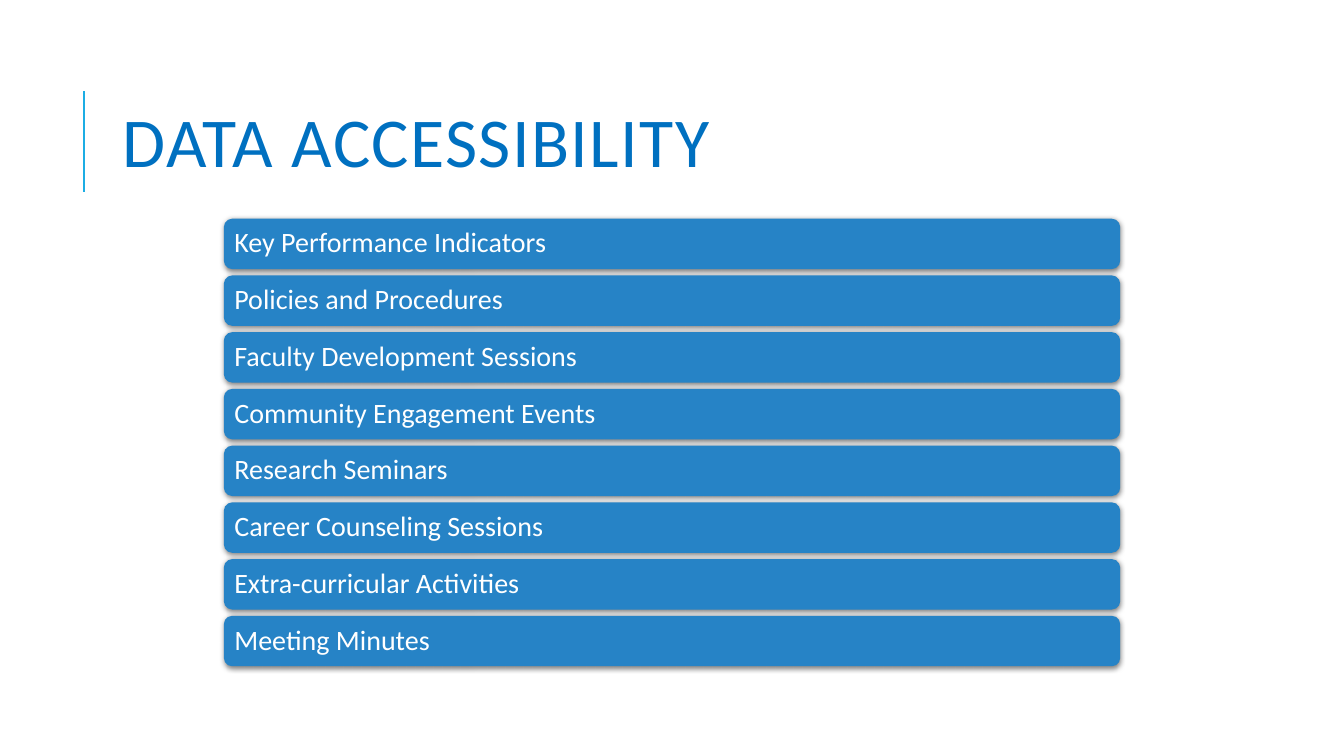
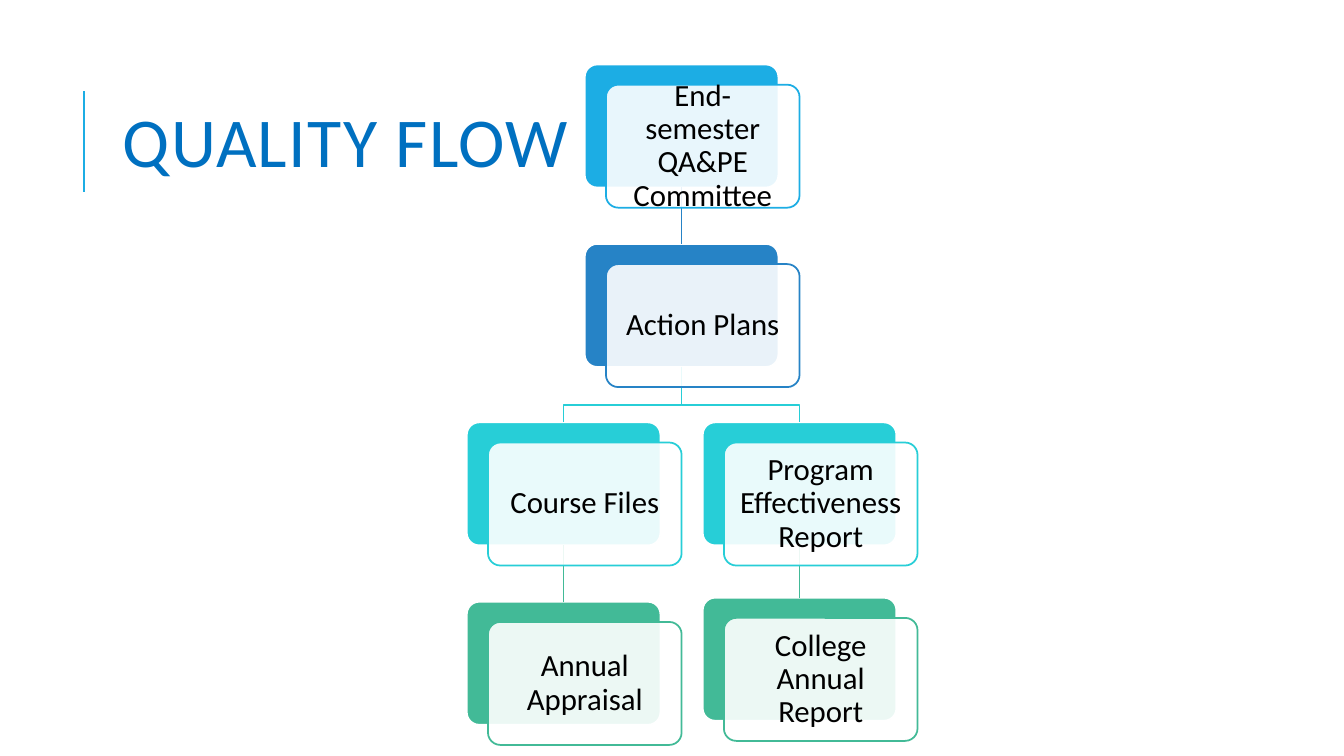
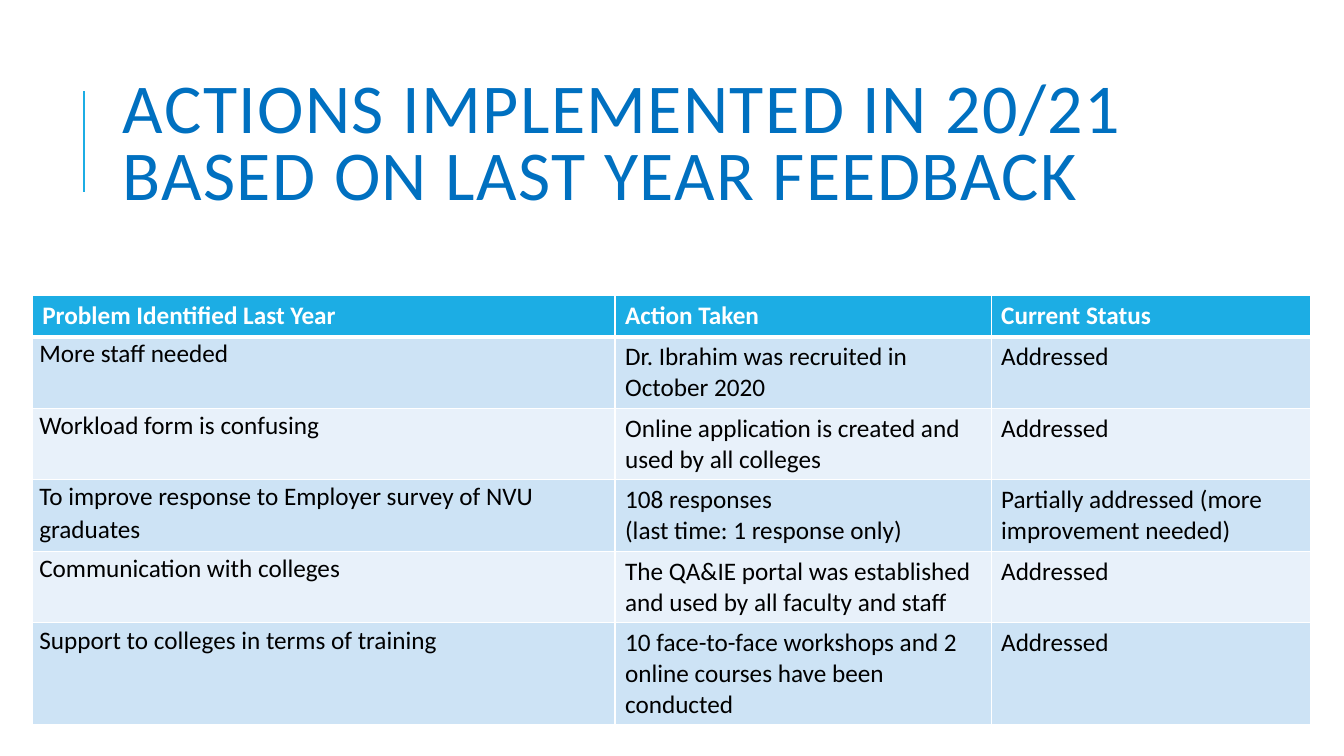
from pptx import Presentation
from pptx.dml.color import RGBColor
from pptx.enum.shapes import MSO_CONNECTOR as Line, MSO_SHAPE as Shape
from pptx.enum.text import MSO_ANCHOR as Anchor, PP_ALIGN as Align
from pptx.oxml.ns import qn
from pptx.util import Inches, Pt
from lxml.etree import SubElement

FONT = "Calibri"
COLORS = {
    "title": "0070C0", "sky": "1CADE4", "blue": "2683C6", "cyan": "27CED7",
    "green": "42BA97", "white": "FFFFFF", "black": "000000",
    "band_dark": "CDE3F5", "band_light": "E8F1FA",
}

# Content
DATA_SOURCES = [
    "Key Performance Indicators", "Policies and Procedures",
    "Faculty Development Sessions", "Community Engagement Events",
    "Research Seminars", "Career Counseling Sessions",
    "Extra-curricular Activities", "Meeting Minutes",
]
# key: (text, colour, column offset in steps, top, parent key)
FLOW = {
    "committee": ("End-semester QA&PE Committee", "sky", 0, 0.64, None),
    "plans": ("Action Plans", "blue", 0, 2.42, "committee"),
    "courses": ("Course Files", "cyan", -1, 4.19, "plans"),
    "appraisal": ("Annual Appraisal", "green", -1, 5.97, "courses"),
    "program": ("Program Effectiveness Report", "cyan", 1, 4.19, "plans"),
    "college": ("College Annual Report", "green", 1, 5.93, "program"),
}
ACTIONS = [
    ("Problem Identified Last Year", "Action Taken", "Current Status"),
    ("More staff needed", "Dr. Ibrahim was recruited in October 2020", "Addressed"),
    ("Workload form is confusing",
     "Online application is created and used by all colleges", "Addressed"),
    ("To improve response to Employer survey of NVU graduates",
     "108 responses\n(last time: 1 response only)",
     "Partially addressed (more improvement needed)"),
    ("Communication with colleges",
     "The QA&IE portal was established and used by all faculty and staff",
     "Addressed"),
    ("Support to colleges in terms of training",
     "10 face-to-face workshops and 2 online courses have been conducted",
     "Addressed"),
]
COLUMN_WIDTHS = [5.78, 3.73, 3.17]
ROW_HEIGHTS = [0.41, 0.71, 0.71, 0.71, 0.71, 1.01]


# Shared helpers
def rgb(name):
    return RGBColor.from_string(COLORS[name])


def write(frame, text, size, color, spacing=1.0, align=Align.LEFT, bold=False):
    frame.text = text
    frame.word_wrap = True
    for paragraph in frame.paragraphs:
        paragraph.line_spacing = spacing
        paragraph.alignment = align
        for run in paragraph.runs:
            font = run.font
            font.name, font.size, font.bold = FONT, Pt(size), bold
            font.color.rgb = rgb(color)


def set_margins(frame, margin):
    frame.margin_left = frame.margin_right = Inches(margin)
    frame.margin_top = frame.margin_bottom = Inches(margin)


def set_line(shape, color, width):
    shape.line.color.rgb = rgb(color)
    shape.line.width = Pt(width)


def add_line(slide, color, width, x1=0, y1=0, x2=0, y2=0):
    line = slide.shapes.add_connector(
        Line.STRAIGHT, Inches(x1), Inches(y1), Inches(x2), Inches(y2))
    set_line(line, color, width)
    SubElement(line._element.spPr, qn("a:effectLst"))
    return line


def add_round_box(slide, x, y, width, height, fill):
    box = slide.shapes.add_shape(
        Shape.ROUNDED_RECTANGLE, Inches(x), Inches(y), Inches(width), Inches(height))
    box.shadow.inherit = False
    box.fill.solid()
    box.fill.fore_color.rgb = rgb(fill)
    box.text_frame.vertical_anchor = Anchor.MIDDLE
    return box


def add_titled_slide(prs, title):
    slide = prs.slides.add_slide(prs.slide_layouts[6])
    add_line(slide, "sky", 1.5, 0.83, 1.9, 0.83, 0.9)
    heading = slide.shapes.add_textbox(
        Inches(1.12), Inches(0.64), Inches(10.63), Inches(1.64)).text_frame
    heading.vertical_anchor = Anchor.MIDDLE
    write(heading, title, 50, "title", spacing=0.8)
    heading.paragraphs[0].runs[0].font._element.set("spc", "100")
    return slide


# Slide 1: stacked bars
def add_soft_shadow(shape):
    effects = shape._element.spPr.find(qn("a:effectLst"))
    shadow = SubElement(effects, qn("a:outerShdw"), blurRad=str(Pt(4)),
                        dist=str(Pt(1)), dir="5400000", rotWithShape="0")
    color = SubElement(shadow, qn("a:srgbClr"), val=COLORS["black"])
    SubElement(color, qn("a:alpha"), val="50000")


def build_accessibility(prs):
    slide = add_titled_slide(prs, "DATA ACCESSIBILITY")
    first_top, last_top = 2.17, 6.11
    pitch = (last_top - first_top) / (len(DATA_SOURCES) - 1)
    for i, source in enumerate(DATA_SOURCES):
        bar = add_round_box(slide, 2.22, first_top + i * pitch, 8.89, 0.5, "blue")
        bar.line.fill.background()
        add_soft_shadow(bar)
        set_margins(bar.text_frame, 0.08)
        write(bar.text_frame, source, 20, "white", spacing=0.9)


# Slide 2: hierarchy of layered cards
CARD_W, CARD_H = 1.92, 1.22
CENTER_X, STEP_X = 5.8, 1.17
PANEL_DX, PANEL_DY = 0.21, 0.2
BRANCH_DROP = 0.38


def card_left(column):
    return CENTER_X + column * STEP_X


def add_branch(slide, parent, child, color):
    start_x = parent.left + parent.width // 2
    start_y = parent.top + parent.height
    end_x = child.left + child.width // 2
    bend_y = start_y + Inches(BRANCH_DROP)
    builder = slide.shapes.build_freeform(start_x, start_y)
    builder.add_line_segments(
        [(start_x, bend_y), (end_x, bend_y), (end_x, child.top)], close=False)
    branch = builder.convert_to_shape()
    branch.fill.background()
    branch.shadow.inherit = False
    set_line(branch, color, 1.25)


def build_quality_flow(prs):
    slide = add_titled_slide(prs, "QUALITY FLOW")
    cards = {}
    for key, (_, color, column, top, _) in FLOW.items():
        card = add_round_box(slide, card_left(column), top, CARD_W, CARD_H, color)
        card.adjustments[0] = 0.1
        set_line(card, "white", 1.25)
        cards[key] = card

    # Links lie above the cards and below the translucent panels
    for key, (_, color, column, _, parent) in FLOW.items():
        if parent is None:
            continue
        if FLOW[parent][2] == column:
            link = add_line(slide, color, 1.25)
            link.begin_connect(cards[parent], 2)
            link.end_connect(cards[key], 0)
        else:
            add_branch(slide, cards[parent], cards[key], color)

    for text, color, column, top, _ in FLOW.values():
        panel = add_round_box(slide, card_left(column) + PANEL_DX, top + PANEL_DY,
                              CARD_W, CARD_H, "white")
        panel.adjustments[0] = 0.1
        set_line(panel, color, 1.25)
        fill_color = panel._element.spPr.find(qn("a:solidFill"))[0]
        SubElement(fill_color, qn("a:alpha"), val="90000")
        set_margins(panel.text_frame, 0.09)
        write(panel.text_frame, text, 22, "black", spacing=0.9, align=Align.CENTER)


# Slide 3: table
def set_borders(cell, widths):
    properties = cell._tc.get_or_add_tcPr()
    for position, (side, width) in enumerate(widths.items()):
        border = properties.makeelement(qn(f"a:ln{side}"), {"w": str(Pt(width))})
        fill = SubElement(border, qn("a:solidFill"))
        SubElement(fill, qn("a:srgbClr"), val=COLORS["white"])
        properties.insert(position, border)


def build_actions(prs):
    slide = add_titled_slide(
        prs, "ACTIONS IMPLEMENTED IN 20/21 BASED ON LAST YEAR FEEDBACK")
    table = slide.shapes.add_table(
        len(ACTIONS), len(COLUMN_WIDTHS), Inches(0.32), Inches(2.93),
        Inches(sum(COLUMN_WIDTHS)), Inches(sum(ROW_HEIGHTS))).table
    for column, width in zip(table.columns, COLUMN_WIDTHS):
        column.width = Inches(width)
    for r, (row, height) in enumerate(zip(ACTIONS, ROW_HEIGHTS)):
        table.rows[r].height = Inches(height)
        header = r == 0
        fill = "sky" if header else ("band_dark" if r % 2 else "band_light")
        for c, text in enumerate(row):
            cell = table.cell(r, c)
            cell.fill.solid()
            cell.fill.fore_color.rgb = rgb(fill)
            set_borders(cell, {"L": 1, "R": 1, "T": 3 if r == 1 else 1,
                               "B": 3 if header else 1})
            problem = c == 0 and not header
            write(cell.text_frame, text, 18, "white" if header else "black",
                  spacing=1.07 if problem else 1.0, bold=header)
            if problem:
                cell.margin_left = cell.margin_right = Inches(0.07)
                cell.margin_top = cell.margin_bottom = 0


def main():
    prs = Presentation()
    prs.slide_width, prs.slide_height = Inches(13.33), Inches(7.5)
    build_accessibility(prs)
    build_quality_flow(prs)
    build_actions(prs)
    prs.save("out.pptx")


if __name__ == "__main__":
    main()
